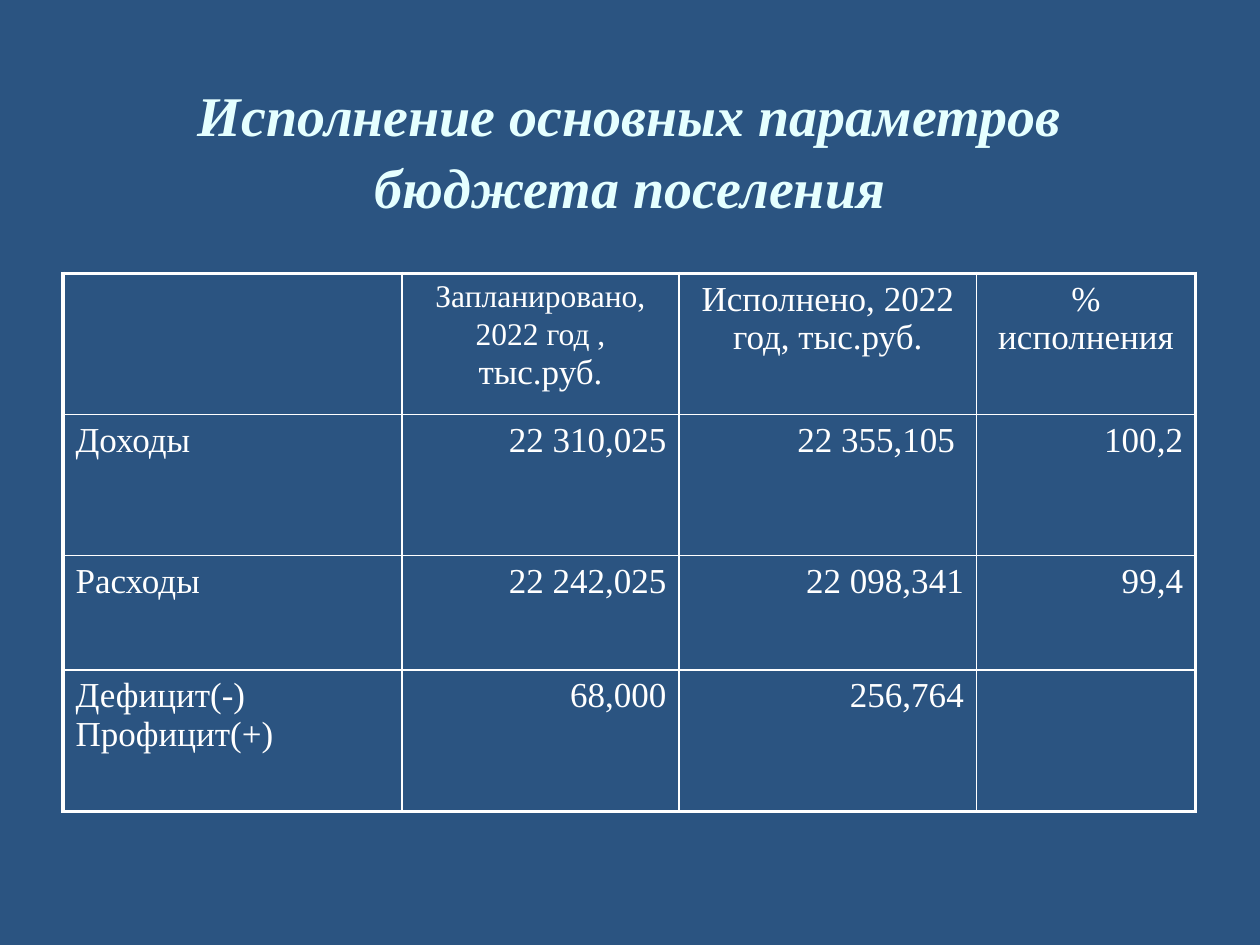
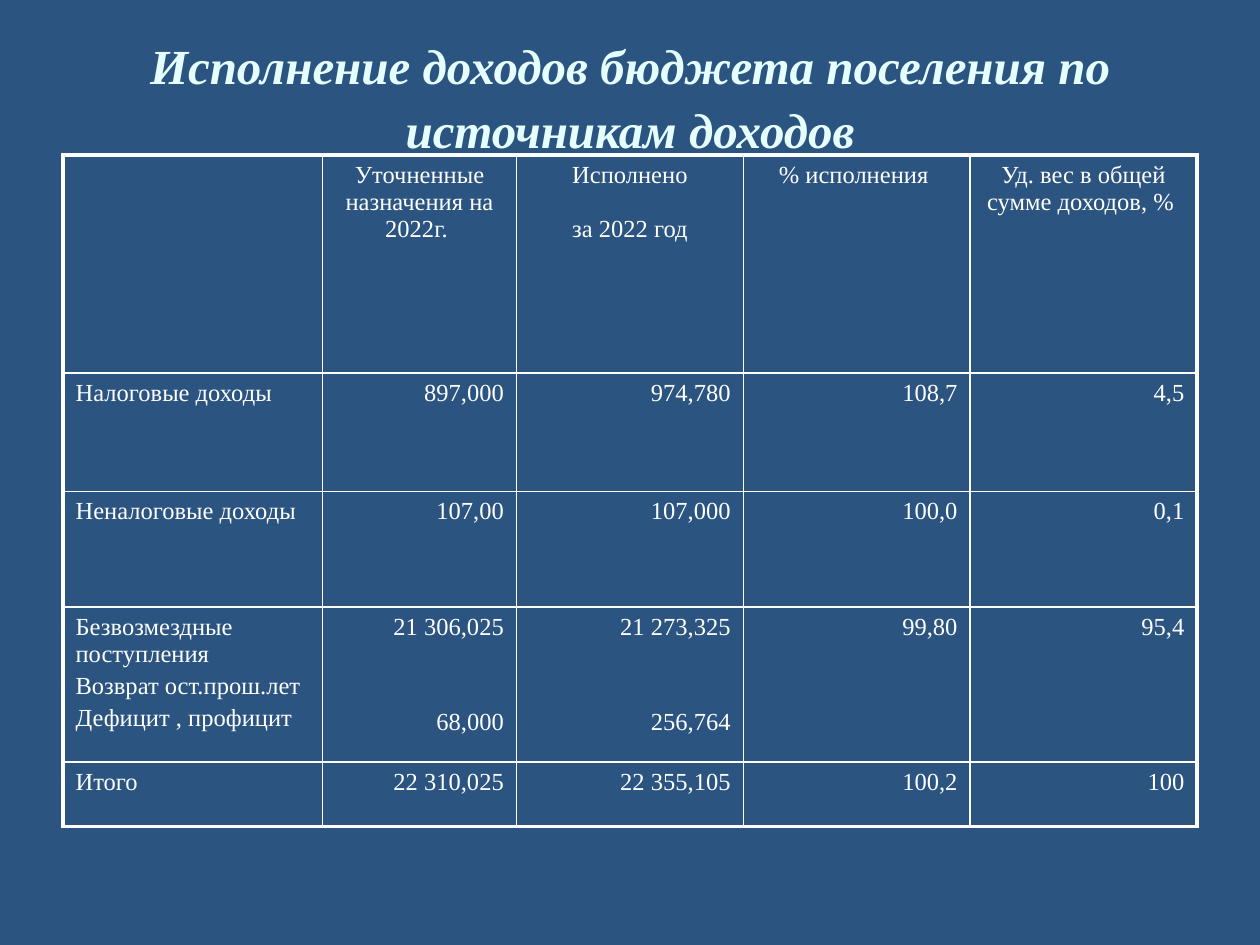
from dataclasses import dataclass

from lxml import etree
from pptx import Presentation
from pptx.dml.color import RGBColor
from pptx.enum.text import MSO_ANCHOR, MSO_AUTO_SIZE, PP_ALIGN
from pptx.oxml.ns import qn
from pptx.util import Inches, Pt

LEFT, CENTER, RIGHT = PP_ALIGN.LEFT, PP_ALIGN.CENTER, PP_ALIGN.RIGHT
MIDDLE = MSO_ANCHOR.MIDDLE
NO_AUTOFIT = MSO_AUTO_SIZE.NONE


@dataclass(frozen=True)
class Theme:
    font: str = "Times New Roman"
    background: str = "2B5481"
    title: str = "E5FFFF"
    text: str = "FFFFFF"
    title_spacing: float = 1.08
    inner_line: float = 1
    outer_line: float = 2.25


@dataclass(frozen=True)
class Stack:
    paras: tuple
    gap: float


@dataclass(frozen=True)
class Spans:
    sized_texts: tuple


THEME = Theme()
WIDTH, HEIGHT = 10, 7.5
MARGIN = WIDTH * 0.05
TITLE_TOP = 0.42

SLIDES = [
    {
        "title": "Исполнение основных параметров бюджета поселения",
        "title_size": 32,
        "title_height": 1.5,
        "table_top": 2.17,
        "text_size": 20,
        "columns": [2.69, 2.2, 2.36, 1.74],
        "rows": [1.12, 1.12, 0.91, 1.12],
        "cells": [
            ["", Spans((("Запланировано, 2022 год ,", 18), (" тыс.руб.", 20))),
             "Исполнено, 2022 год, тыс.руб.", "% исполнения"],
            ["Доходы", "22 310,025", "22 355,105 ", "100,2"],
            ["Расходы", "22 242,025", "22 098,341", "99,4"],
            ["Дефицит(-) Профицит(+)", "68,000", "256,764", ""],
        ],
    },
    {
        "title": "Исполнение доходов бюджета поселения по источникам доходов",
        "title_size": 28,
        "title_height": 0.66,
        "table_top": 1.23,
        "text_size": 14,
        "columns": [2.06, 1.54, 1.8, 1.8, 1.8],
        "rows": [1.73, 0.94, 0.92, 1.23, 0.51],
        "cells": [
            ["", "Уточненные назначения на 2022г. ",
             Stack(("Исполнено", "за 2022 год"), 15.5),
             "% исполнения ", "Уд. вес в общей сумме доходов, % "],
            ["Налоговые доходы", "897,000", "974,780", "108,7", "4,5"],
            ["Неналоговые доходы", "107,00", "107,000", "100,0", "0,1"],
            [Stack(("Безвозмездные поступления", "Возврат ост.прош.лет",
                    "Дефицит , профицит"), 2.8),
             Stack(("21 306,025", "68,000"), 39),
             Stack(("21 273,325", "256,764"), 39), "99,80", "95,4"],
            ["Итого", "22 310,025", "22 355,105", "100,2", "100"],
        ],
    },
]


def add_span(para, text, size, color, emphasis=False):
    """Append one formatted run to a paragraph."""
    span = para.add_run()
    span.text = text
    font = span.font
    font.name, font.size = THEME.font, Pt(size)
    font.bold = font.italic = emphasis
    font.color.rgb = RGBColor.from_string(color)


def set_title(page, content):
    """Place and fill the title placeholder."""
    box = page.shapes.title
    box.left, box.top = Inches(MARGIN), Inches(TITLE_TOP)
    box.width = Inches(WIDTH - 2 * MARGIN)
    box.height = Inches(content["title_height"])
    frame = box.text_frame
    frame.word_wrap, frame.auto_size = True, NO_AUTOFIT
    frame.vertical_anchor = MIDDLE
    para = frame.paragraphs[0]
    para.alignment, para.line_spacing = CENTER, THEME.title_spacing
    add_span(para, content["title"], content["title_size"], THEME.title, True)


def set_borders(cell, outer_sides):
    """Draw all four cell borders, heavier on the outer sides."""
    properties = cell._tc.get_or_add_tcPr()
    for side in "LRTB":
        weight = THEME.outer_line if side in outer_sides else THEME.inner_line
        line = etree.SubElement(properties, qn(f"a:ln{side}"), w=str(Pt(weight)))
        fill = etree.SubElement(line, qn("a:solidFill"))
        etree.SubElement(fill, qn("a:srgbClr"), val=THEME.text)


def fill_cell(cell, value, size, alignment):
    """Write a cell's paragraphs run by run."""
    stack = value if isinstance(value, Stack) else Stack((value,), 0)
    frame = cell.text_frame
    for index, item in enumerate(stack.paras):
        para = frame.add_paragraph() if index else frame.paragraphs[0]
        para.alignment = alignment
        if index:
            para.space_before = Pt(stack.gap)
        sized_texts = item.sized_texts if isinstance(item, Spans) else ((item, size),)
        for text, span_size in sized_texts:
            if text:
                add_span(para, text, span_size, THEME.text)


def add_budget_table(page, content):
    """Build the table with a heavy frame and thin inner lines."""
    widths, heights = content["columns"], content["rows"]
    table = page.shapes.add_table(
        len(heights), len(widths), Inches(MARGIN), Inches(content["table_top"]),
        Inches(sum(widths)), Inches(sum(heights))).table
    table.first_row = table.horz_banding = False
    for column, width in zip(table.columns, widths):
        column.width = Inches(width)
    for row, height in zip(table.rows, heights):
        row.height = Inches(height)
    last_row, last_column = len(heights) - 1, len(widths) - 1
    for r, values in enumerate(content["cells"]):
        for c, value in enumerate(values):
            cell = table.cell(r, c)
            edges = {"L": c == 0, "R": c == last_column,
                     "T": r == 0, "B": r == last_row}
            set_borders(cell, [side for side, outer in edges.items() if outer])
            cell.fill.background()
            alignment = CENTER if r == 0 else LEFT if c == 0 else RIGHT
            fill_cell(cell, value, content["text_size"], alignment)


def main():
    """Build and save the deck."""
    deck = Presentation()
    deck.slide_width, deck.slide_height = Inches(WIDTH), Inches(HEIGHT)
    backdrop = deck.slide_master.background.fill
    backdrop.solid()
    backdrop.fore_color.rgb = RGBColor.from_string(THEME.background)
    title_only = deck.slide_layouts[5]
    for content in SLIDES:
        page = deck.slides.add_slide(title_only)
        set_title(page, content)
        add_budget_table(page, content)
    deck.save("out.pptx")


if __name__ == "__main__":
    main()
